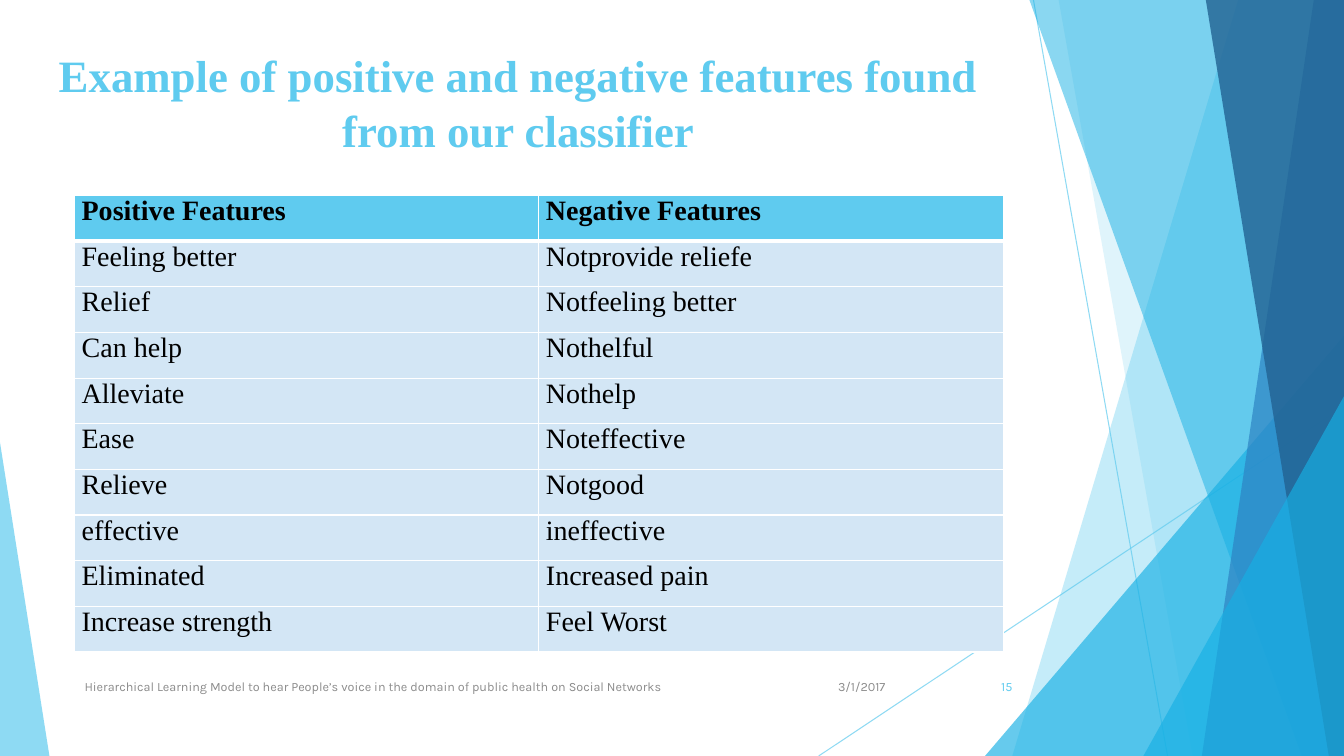
from pptx import Presentation
from pptx import util as u
from pptx.dml.color import RGBColor
from pptx.enum import shapes, text
from pptx.oxml import parse_xml
from pptx.oxml.ns import nsdecls, qn
from lxml import etree

Inches, Pt = u.Inches, u.Pt
COLORS = {
    "sky": "5FCBEF", "cyan": "17B0E4", "blue": "2E83C3", "navy": "226292",
    "row": "D3E6F5", "white": "FFFFFF", "black": "000000", "gray": "8C8C8C",
}
WIDTH, HEIGHT = 13.33, 7.5

deck = Presentation()
deck.slide_width, deck.slide_height = Inches(WIDTH), Inches(HEIGHT)
slide = deck.slides.add_slide(deck.slide_layouts[6])


def set_alpha(part, percent):
    color = part._element.spPr.find(".//" + qn("a:srgbClr"))
    etree.SubElement(color, qn("a:alpha")).set("val", str(percent * 1000))


def add_run(paragraph, words, font, size, color, bold=False):
    run = paragraph.add_run()
    run.text = words
    run.font.name, run.font.size, run.font.bold = font, Pt(size), bold
    run.font.color.rgb = RGBColor.from_string(COLORS[color])


# Thin diagonal lines
for x1, y1, x2, y2 in [(10.25, 0, 11.58, HEIGHT), (WIDTH, 4.03, 8.12, HEIGHT)]:
    ray = slide.shapes.add_connector(
        shapes.MSO_CONNECTOR.STRAIGHT, Inches(x1), Inches(y1), Inches(x2), Inches(y2))
    ray.line.width = Pt(0.75)
    ray.line.color.rgb = RGBColor.from_string(COLORS["sky"])
    set_alpha(ray, 70)
    etree.SubElement(ray._element.spPr, qn("a:effectLst"))

# Translucent facets, back to front
# band: top-left x, bottom-left x; triangle: left, top, width, apex position
facets = [
    ("band", (12.28, 10.04), "sky", 36),
    ("band", (10.5, 11.83), "sky", 20),
    ("triangle", (9.77, 3.33, 3.56, 1), "cyan", 66),
    ("band", (10.21, 12.91), "cyan", 50),
    ("band", (13.03, 11.92), "blue", 70),
    ("band", (11.96, 13.18), "navy", 80),
    ("triangle", (11.34, 3.93, 1.99, 1), "cyan", 66),
    ("triangle", (0, 4.39, 0.49, 0), "sky", 70),
]
for kind, geometry, color, opacity in facets:
    if kind == "band":
        top_x, bottom_x = geometry
        outline = slide.shapes.build_freeform(Inches(top_x), 0)
        outline.add_line_segments([
            (Inches(WIDTH), 0), (Inches(WIDTH), Inches(HEIGHT)),
            (Inches(bottom_x), Inches(HEIGHT))], close=True)
        facet = outline.convert_to_shape()
    else:
        left, top, width, apex = geometry
        facet = slide.shapes.add_shape(
            shapes.MSO_SHAPE.ISOSCELES_TRIANGLE,
            Inches(left), Inches(top), Inches(width), Inches(HEIGHT - top))
        facet.adjustments[0] = apex
    facet.shadow.inherit = False
    facet.fill.solid()
    facet.fill.fore_color.rgb = RGBColor.from_string(COLORS[color])
    set_alpha(facet, opacity)
    facet.line.fill.background()

# Title
title = slide.shapes.add_textbox(Inches(0.14), Inches(0.42), Inches(10), Inches(1.31))
title.text_frame.word_wrap = True
heading = title.text_frame.paragraphs[0]
heading.alignment = text.PP_ALIGN.CENTER
heading.line_spacing = Pt(39)
add_run(heading, "Example of positive and negative features found from our classifier",
        "Times New Roman", 32, "sky", True)

# Feature table
features = [
    ("Positive Features", "Negative Features"),
    ("Feeling better", "Notprovide reliefe"),
    ("Relief", "Notfeeling better"),
    ("Can help", "Nothelful"),
    ("Alleviate", "Nothelp"),
    ("Ease", "Noteffective"),
    ("Relieve", "Notgood"),
    ("effective", "ineffective"),
    ("Eliminated", "Increased pain"),
    ("Increase strength", "Feel Worst"),
]
table = slide.shapes.add_table(
    len(features), 2, Inches(0.74), Inches(1.94), Inches(9.21), Inches(4.53)).table
for r, pair in enumerate(features):
    for c, feature in enumerate(pair):
        cell = table.cell(r, c)
        cell.margin_left = cell.margin_right = Inches(0.07)
        cell.margin_top = cell.margin_bottom = 0
        paragraph = cell.text_frame.paragraphs[0]
        paragraph.alignment = text.PP_ALIGN.JUSTIFY
        add_run(paragraph, feature, "Times New Roman", 20, "black", r == 0)
        cell_props = cell._tc.get_or_add_tcPr()
        for side in "LRTB":
            thick = (r == 0 and side == "B") or (r == 1 and side == "T")
            cell_props.append(parse_xml(
                f'<a:ln{side} {nsdecls("a")} w="{Pt(3 if thick else 1)}"><a:solidFill>'
                f'<a:srgbClr val="{COLORS["white"]}"/></a:solidFill></a:ln{side}>'))
        cell.fill.solid()
        cell.fill.fore_color.rgb = RGBColor.from_string(COLORS["row" if r else "sky"])

# Footer: date, talk title, page number
footer = [
    (7.88, 1, "3/1/2017", text.PP_ALIGN.RIGHT, "gray"),
    (0.74, 6.89, "Hierarchical Learning Model to hear People’s voice in the domain of "
     "public health on Social Networks", text.PP_ALIGN.LEFT, "gray"),
    (9.39, 0.75, "15", text.PP_ALIGN.RIGHT, "sky"),
]
for left, width, words, alignment, color in footer:
    note = slide.shapes.add_textbox(Inches(left), Inches(6.61), Inches(width), Inches(0.4))
    note.text_frame.word_wrap = True
    note.text_frame.vertical_anchor = text.MSO_ANCHOR.MIDDLE
    note.text_frame.paragraphs[0].alignment = alignment
    add_run(note.text_frame.paragraphs[0], words, "Karla", 9, color)

deck.save("out.pptx")
